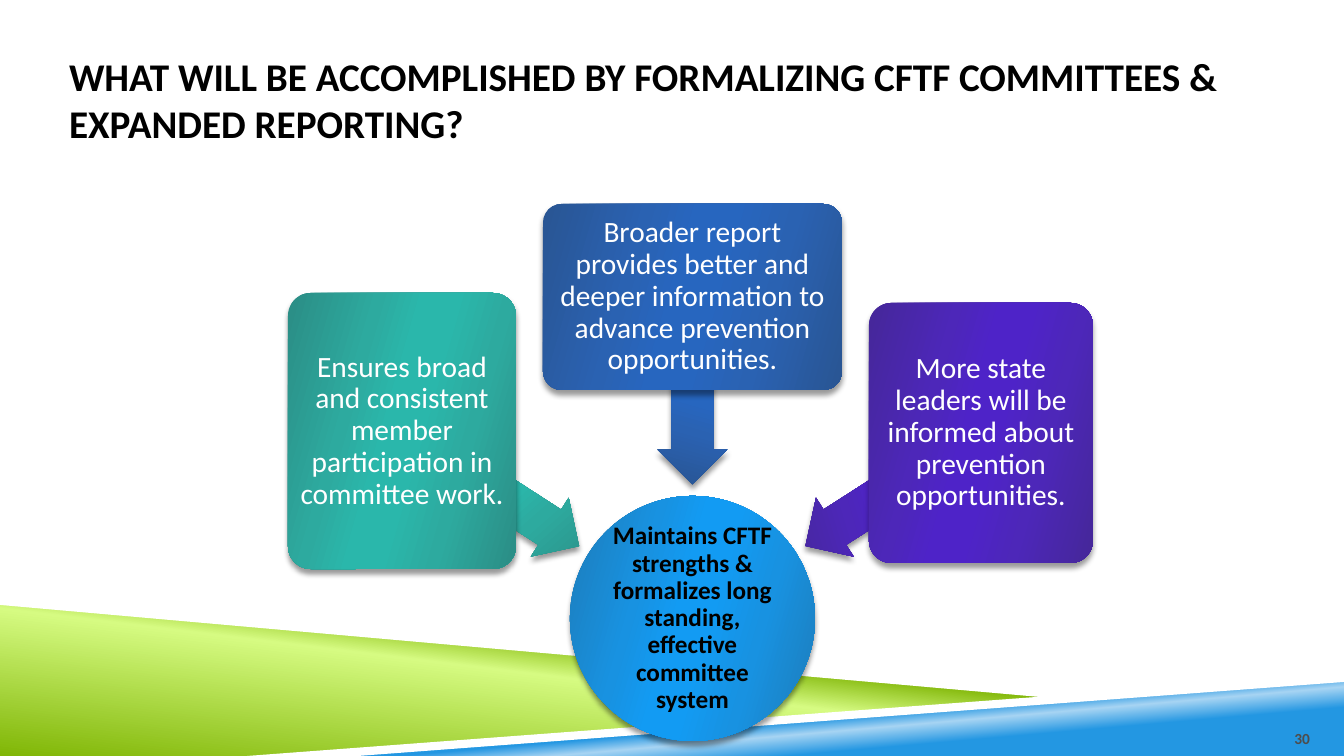
from lxml import etree
from pptx import Presentation
from pptx import util as u
from pptx.dml.color import RGBColor
from pptx.enum import shapes, text
from pptx.oxml.ns import qn

SLIDE_WIDTH, SLIDE_HEIGHT = 1344, 756
EMU_PER_PX = 12192000 / SLIDE_WIDTH
FONT = "Calibri"

BLACK = RGBColor(0x00, 0x00, 0x00)
WHITE = RGBColor(0xFF, 0xFF, 0xFF)
GRAY = RGBColor(0x4D, 0x4D, 0x4D)
GREEN = RGBColor(0x80, 0xB6, 0x06)
LIME = RGBColor(0xD6, 0xFB, 0x82)
BLUE = RGBColor(0x23, 0x97, 0xE2)
PALE_BLUE = RGBColor(0xA7, 0xD5, 0xF3)

# Edge, middle and centre shades of each glossy gradient
SKY = RGBColor(0x1D, 0x7C, 0xB9), RGBColor(0x18, 0x92, 0xE1), RGBColor(0x12, 0x9B, 0xF3)
TEAL = RGBColor(0x2B, 0x8D, 0x85), RGBColor(0x2D, 0xAA, 0x9F), RGBColor(0x2A, 0xB7, 0xAB)
ROYAL = RGBColor(0x29, 0x55, 0x93), RGBColor(0x2A, 0x62, 0xB2), RGBColor(0x27, 0x66, 0xBF)
VIOLET = RGBColor(0x45, 0x27, 0x99), RGBColor(0x4D, 0x27, 0xB9), RGBColor(0x4E, 0x23, 0xC8)

TITLE = "WHAT WILL BE ACCOMPLISHED BY FORMALIZING CFTF COMMITTEES & EXPANDED REPORTING?"
TITLE_BOX = (69, 58, 1175, 83)
PAGE_NUMBER = "30"
PAGE_NUMBER_BOX = (1243, 708, 67, 40)
GOAL = "Maintains CFTF strengths & formalizes long standing, effective committee system"
GOAL_BOX = (570, 496, 245, 245)

# Text, shades, box, arrow box, arrow rotation
BENEFITS = [
    ("Ensures broad and consistent member participation in committee work.",
     TEAL, (288, 293, 228, 276), (385, 454, 211, 70), 212.8),
    ("Broader report provides better and deeper information to advance prevention opportunities.",
     ROYAL, (543, 204, 299, 186), (599, 356, 187, 70), 270),
    ("More state leaders will be informed about prevention opportunities.",
     VIOLET, (869, 303, 224, 260), (789, 455, 208, 70), 327.4),
]

# Outline, gradient stops, gradient angle
BANDS = [
    ([(0, 602), (1064, 698), (269, 756), (0, 756)],
     [(0, GREEN), (52, LIME), (66, GREEN)], 277),
    ([(266, 756), (1344, 677), (1344, 756)],
     [(28, BLUE), (40, PALE_BLUE), (48, BLUE)], 265),
    ([(0, 597), (0, 605), (1062, 699), (1118, 696)], [(0, WHITE), (100, WHITE)], 0),
    ([(1344, 674), (247, 756), (358, 756), (1344, 682)], [(0, WHITE), (100, WHITE)], 0),
]


def px(length):
    return round(length * EMU_PER_PX)


def frame(box):
    return [px(length) for length in box]


def set_gradient(shape, stops, angle):
    """Fill with (percent, colour) stops; the angle runs clockwise in degrees."""
    shape.fill.gradient()
    gradient = shape._element.spPr.find(qn("a:gradFill"))
    gradient.clear()
    gradient.set("rotWithShape", "1")
    stop_list = etree.SubElement(gradient, qn("a:gsLst"))
    for percent, color in stops:
        stop = etree.SubElement(stop_list, qn("a:gs"), pos=str(percent * 1000))
        etree.SubElement(stop, qn("a:srgbClr"), val=str(color))
    etree.SubElement(gradient, qn("a:lin"), ang=str(angle * 60000), scaled="0")
    shape.line.fill.background()
    shape.shadow.inherit = False


def add_band(slide, outline, stops, angle):
    builder = slide.shapes.build_freeform(*outline[0], scale=EMU_PER_PX)
    builder.add_line_segments(outline[1:], close=True)
    set_gradient(builder.convert_to_shape(), stops, angle)


def add_glossy(slide, kind, box, shades):
    """Add a preset shape with a glossy gradient and a soft drop shadow."""
    shape = slide.shapes.add_shape(kind, *frame(box))
    edge, middle, centre = shades
    set_gradient(shape, [(0, edge), (30, middle), (45, centre),
                         (55, centre), (73, middle), (100, edge)], 16)
    effects = shape._element.spPr.find(qn("a:effectLst"))
    shadow = etree.SubElement(effects, qn("a:outerShdw"), blurRad=str(u.Pt(4)),
                              dist=str(u.Pt(3.3)), dir="5400000", rotWithShape="0")
    color = etree.SubElement(shadow, qn("a:srgbClr"), val=str(BLACK))
    etree.SubElement(color, qn("a:alpha"), val="40000")
    return shape


def write(shape, content, size, color=BLACK, bold=False, align=text.PP_ALIGN.CENTER,
          anchor=text.MSO_ANCHOR.MIDDLE, insets=(0, 0, 0, 0), spacing=None):
    """Set the shape's text; insets are left, top, right, bottom in px."""
    body = shape.text_frame
    body.word_wrap = True
    body.auto_size = text.MSO_AUTO_SIZE.NONE
    body.vertical_anchor = anchor
    body.margin_left, body.margin_top, body.margin_right, body.margin_bottom = frame(insets)
    paragraph = body.paragraphs[0]
    paragraph.alignment = align
    paragraph.line_spacing = spacing
    run = paragraph.add_run()
    run.text = content
    run.font.name, run.font.size, run.font.bold = FONT, u.Pt(size), bold
    run.font.color.rgb = color


def main():
    presentation = Presentation()
    presentation.slide_width = px(SLIDE_WIDTH)
    presentation.slide_height = px(SLIDE_HEIGHT)
    slide = presentation.slides.add_slide(presentation.slide_layouts[5])

    for band in BANDS:
        add_band(slide, *band)

    title = slide.shapes.title
    title.left, title.top, title.width, title.height = frame(TITLE_BOX)
    write(title, TITLE, 28, bold=True, align=text.PP_ALIGN.LEFT, insets=(0, 5, 0, 5))

    goal = add_glossy(slide, shapes.MSO_SHAPE.OVAL, GOAL_BOX, SKY)
    write(goal, GOAL, 18, bold=True, insets=(1, 1, 1, 1), spacing=0.9)

    for content, shades, box, arrow_box, rotation in BENEFITS:
        arrow = add_glossy(slide, shapes.MSO_SHAPE.LEFT_ARROW, arrow_box, shades)
        arrow.adjustments[0] = 0.6
        arrow.rotation = rotation
        card = add_glossy(slide, shapes.MSO_SHAPE.ROUNDED_RECTANGLE, box, shades)
        card.adjustments[0] = 0.1
        write(card, content, 21, color=WHITE, insets=(4, 4, 4, 4), spacing=0.9)

    page_number = slide.shapes.add_textbox(*frame(PAGE_NUMBER_BOX))
    write(page_number, PAGE_NUMBER, 11, color=GRAY, bold=True, align=text.PP_ALIGN.RIGHT,
          anchor=text.MSO_ANCHOR.BOTTOM, insets=(0, 5, 0, 0))

    presentation.save("out.pptx")


if __name__ == "__main__":
    main()
